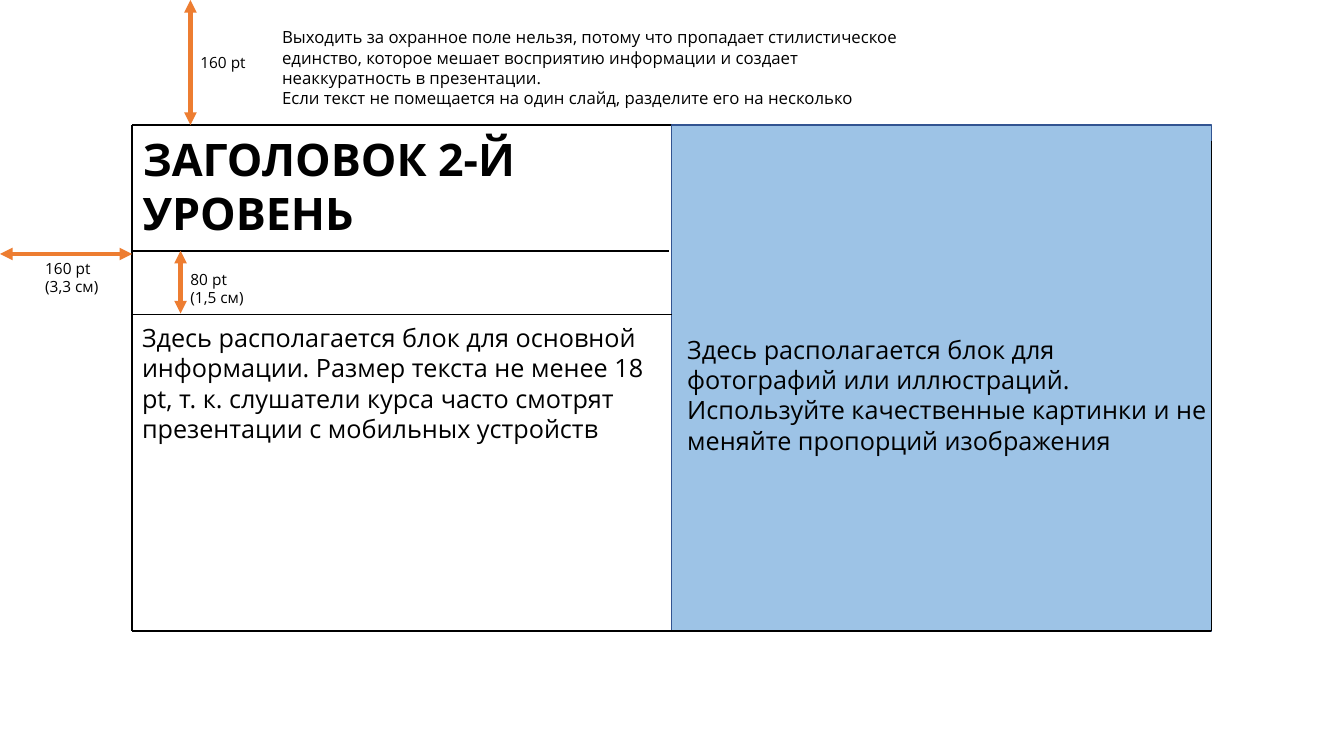
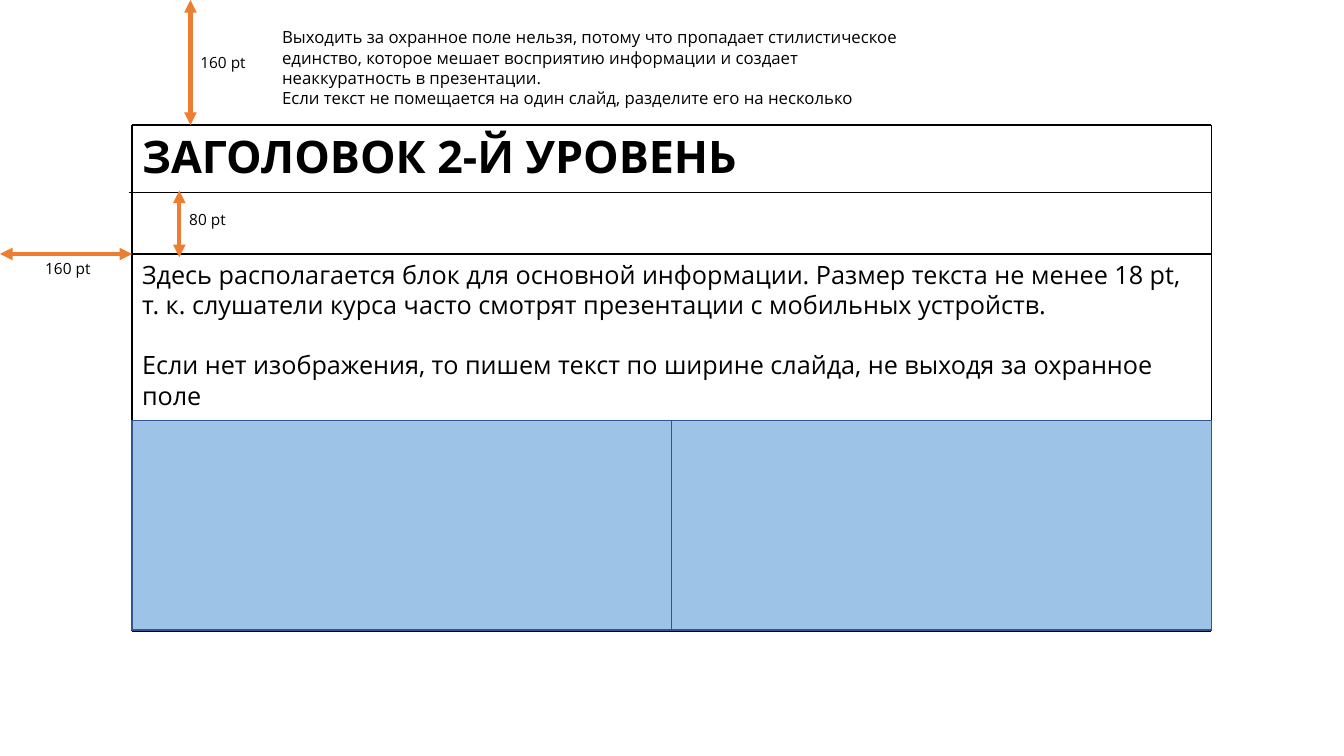
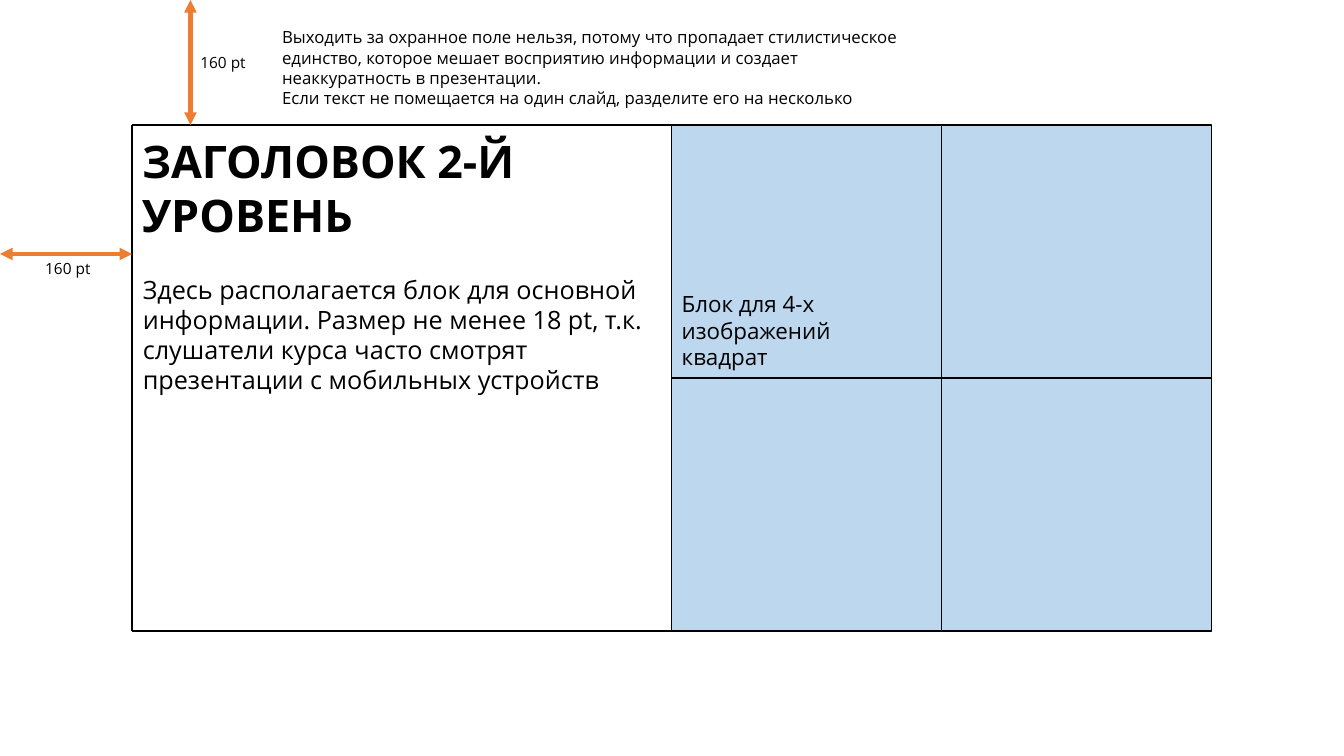
from pptx import Presentation
from pptx.dml.color import RGBColor
from pptx.enum.shapes import MSO_CONNECTOR, MSO_SHAPE
from pptx.oxml.ns import qn
from pptx.util import Cm, Pt
from lxml import etree

LINE = MSO_CONNECTOR.STRAIGHT
RECT = MSO_SHAPE.RECTANGLE

BLACK = RGBColor(0x00, 0x00, 0x00)
ORANGE = RGBColor(0xED, 0x7D, 0x31)
BLUE = RGBColor(0x9D, 0xC3, 0xE6)
PALE = RGBColor(0xBD, 0xD7, 0xEE)
NAVY = RGBColor(0x32, 0x54, 0x91)

FONT = "Open Sans"
LEFT, TOP, RIGHT, BASE = 3.33, 3.15, 30.53, 15.9
WIDE = RIGHT - LEFT
HALF = WIDE / 2
MID = LEFT + HALF
SIDE = 6.4

TITLE = "ЗАГОЛОВОК 2-Й УРОВЕНЬ"
NOTE = (
    "Выходить за охранное поле нельзя, потому что пропадает стилистическое "
    "единство, которое мешает восприятию информации и создает неаккуратность "
    "в презентации.\n"
    "Если текст не помещается на один слайд, разделите его на несколько"
)
LEAD = "Здесь располагается блок для основной информации. "
MAIN = (
    LEAD + "Размер текста не менее 18 pt, т. к. слушатели курса "
    "часто смотрят презентации с мобильных устройств"
)


def add_text(slide, text, x, y, w, h, size=18, bold=False, gap=0):
    box = slide.shapes.add_textbox(Cm(x), Cm(y), Cm(w), Cm(h))
    frame = box.text_frame
    frame.word_wrap = True
    frame.text = text
    for i, para in enumerate(frame.paragraphs):
        if i and gap:
            para.space_before = Pt(gap)
        for run in para.runs:
            run.font.name = FONT
            run.font.size = Pt(size)
            run.font.bold = bold
            run.font.color.rgb = BLACK


def add_title(slide, x, y, w, h):
    add_text(slide, TITLE, x, y, w, h, size=32, bold=True)


def add_label(slide, text, x, y, w=2.3, h=0.75):
    add_text(slide, text, x, y, w, h, size=11)


def add_line(slide, x1, y1, x2, y2, color=BLACK, width=1):
    line = slide.shapes.add_connector(LINE, Cm(x1), Cm(y1), Cm(x2), Cm(y2))
    line.line.color.rgb = color
    line.line.width = Pt(width)
    etree.SubElement(line._element.spPr, qn("a:effectLst"))
    return line


def add_arrow(slide, x1, y1, x2, y2):
    arrow = add_line(slide, x1, y1, x2, y2, ORANGE, 3)
    stroke = arrow.line._get_or_add_ln()
    for end in ("a:headEnd", "a:tailEnd"):
        etree.SubElement(stroke, qn(end), type="triangle")


def add_area(slide, x, y, h, fill=BLUE, edge=NAVY):
    area = slide.shapes.add_shape(RECT, Cm(x), Cm(y), Cm(HALF), Cm(h))
    area.shadow.inherit = False
    area.fill.solid()
    area.fill.fore_color.rgb = fill
    area.line.color.rgb = edge
    area.line.width = Pt(1)
    return area


def open_field(deck, side="160 pt"):
    slide = deck.slides.add_slide(deck.slide_layouts[6])
    add_line(slide, LEFT, TOP, RIGHT, TOP)
    add_line(slide, LEFT, TOP, LEFT, BASE)
    add_arrow(slide, 4.8, 0, 4.8, TOP)
    add_arrow(slide, LEFT, SIDE, 0, SIDE)
    add_label(slide, "160 pt", 4.8, 1.22)
    add_label(slide, side, 0.89, SIDE)
    add_text(slide, NOTE, 6.86, 0.56, 16.6, 3, size=12)
    return slide


def close_field(slide, start=3.56):
    add_line(slide, LEFT, BASE, RIGHT, BASE)
    add_line(slide, RIGHT, start, RIGHT, BASE)


def photo_slide(deck):
    slide = open_field(deck, "160 pt\n(3,3 см)")
    add_text(slide, MAIN, LEFT, 8, HALF, 4)
    add_title(slide, 3.35, 3.2, HALF, 3)
    add_area(slide, MID, TOP, BASE - TOP)
    close_field(slide)
    add_text(
        slide,
        "Здесь располагается блок для фотографий или иллюстраций. "
        "Используйте качественные картинки и не меняйте пропорций изображения",
        17.07, 8.3, HALF, 3.33,
    )
    add_line(slide, LEFT, 7.92, MID, 7.92)
    add_line(slide, LEFT, 6.32, 16.87, 6.32)
    add_label(slide, "80 pt\n(1,5 см)", 4.55, 6.68, h=1.2)
    add_arrow(slide, 4.55, 6.32, 4.55, 7.9)


def wide_slide(deck):
    slide = open_field(deck)
    add_text(
        slide,
        MAIN + ".\nЕсли нет изображения, то пишем текст по ширине слайда, "
        "не выходя за охранное поле",
        LEFT, SIDE, WIDE, 4.78, gap=21.6,
    )
    add_title(slide, LEFT, 3.12, WIDE, 1.63)
    close_field(slide, TOP)
    add_line(slide, LEFT, SIDE, RIGHT, SIDE)
    add_line(slide, 3.25, 4.85, RIGHT, 4.85)
    add_label(slide, "80 pt", 4.52, 5.16)
    add_arrow(slide, 4.52, 4.8, 4.52, 6.48)
    for x in (MID, LEFT):
        add_area(slide, x, 10.6, 5.28)


def grid_slide(deck):
    slide = open_field(deck)
    add_text(
        slide,
        LEAD + "Размер не менее 18 pt, т.к. слушатели курса часто смотрят "
        "презентации с мобильных устройств",
        3.35, 6.78, HALF, 4,
    )
    area = add_area(slide, MID, TOP, BASE - TOP, PALE, BLACK)
    close_field(slide)
    for start, end in ((0, 2), (3, 1)):
        line = add_line(slide, MID, TOP, RIGHT, BASE)
        line.begin_connect(area, start)
        line.end_connect(area, end)
    add_title(slide, LEFT, 3.25, HALF, 3)
    add_text(slide, "Блок для 4-х изображений квадрат",
             MID, 7.18, 5.28, 2.3, size=16)


def main():
    deck = Presentation()
    deck.slide_width = Cm(33.87)
    deck.slide_height = Cm(19.05)
    photo_slide(deck)
    wide_slide(deck)
    grid_slide(deck)
    deck.save("out.pptx")


if __name__ == "__main__":
    main()
